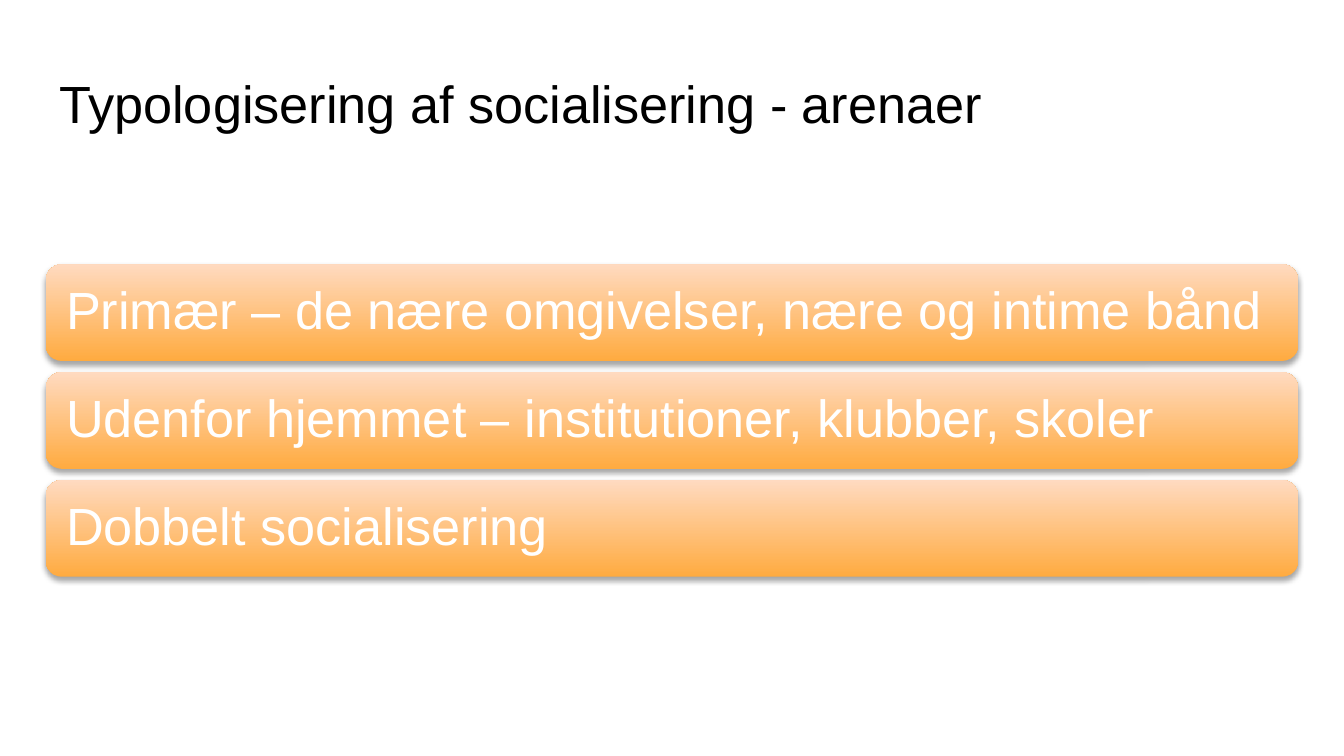
from dataclasses import dataclass

from lxml import etree
from pptx import Presentation
from pptx.dml.color import RGBColor
from pptx.enum import shapes, text
from pptx.oxml import ns
from pptx.util import Pt

BLACK = RGBColor(0x00, 0x00, 0x00)
WHITE = RGBColor(0xFF, 0xFF, 0xFF)
ORANGE = RGBColor(0xFF, 0xAB, 0x40)
PEACH = RGBColor(0xFF, 0xDA, 0xC0)

LEFT, WIDTH = 24.5, 671
TOP, HEIGHT, PITCH = 141.6, 51.8, 57.8


@dataclass
class Bar:
    label: str
    row: int


BARS = [
    Bar(label, row)
    for row, label in enumerate([
        "Primær – de nære omgivelser, nære og intime bånd",
        "Udenfor hjemmet – institutioner, klubber, skoler",
        "Dobbelt socialisering",
    ])
]


def apply(target, values: dict) -> None:
    for name, value in values.items():
        setattr(target, name, value)


def write(shape, words: str, color: RGBColor, inset: float, anchor) -> None:
    frame = shape.text_frame
    frame.text = words
    sides = ("left", "top", "right", "bottom")
    apply(frame, {f"margin_{side}": Pt(inset) for side in sides})
    apply(frame, {
        "word_wrap": True,
        "auto_size": text.MSO_AUTO_SIZE.NONE,
        "vertical_anchor": anchor,
    })
    line = frame.paragraphs[0]
    apply(line, {
        "alignment": text.PP_ALIGN.LEFT,
        "line_spacing": 0.9,
        "space_before": Pt(0),
    })
    font = line.runs[0].font
    apply(font, {"name": "Arial", "size": Pt(28)})
    font.color.rgb = color


def add_shade(shape) -> None:
    """Give the shape a soft shadow that falls straight down."""
    shape.shadow.inherit = False
    effects = shape.element.spPr.find(ns.qn("a:effectLst"))
    shade = etree.SubElement(
        effects, ns.qn("a:outerShdw"),
        blurRad=str(Pt(3.1)), dist=str(Pt(1.8)), dir="5400000",
        rotWithShape="0")
    color = etree.SubElement(shade, ns.qn("a:srgbClr"), val=str(BLACK))
    etree.SubElement(color, ns.qn("a:alpha"), val="35000")


def add_bar(slide, bar: Bar) -> None:
    shape = slide.shapes.add_shape(
        shapes.MSO_SHAPE.ROUNDED_RECTANGLE,
        Pt(LEFT), Pt(TOP + bar.row * PITCH), Pt(WIDTH), Pt(HEIGHT))
    shape.name = f"Arena {bar.row + 1}"
    shape.line.fill.background()
    fill = shape.fill
    fill.gradient()
    fill.gradient_angle = 90
    for stop, color in zip(fill.gradient_stops, (ORANGE, PEACH)):
        stop.color.rgb = color
    add_shade(shape)
    write(shape, bar.label, WHITE, 8.4, text.MSO_ANCHOR.MIDDLE)


def main() -> None:
    deck = Presentation()
    apply(deck, {"slide_width": Pt(720), "slide_height": Pt(405)})
    slide = deck.slides.add_slide(deck.slide_layouts.get_by_name("Title Only"))

    title = slide.shapes.title
    apply(title, {
        "left": Pt(LEFT),
        "top": Pt(35),
        "width": Pt(WIDTH),
        "height": Pt(45),
    })
    write(title, "Typologisering af socialisering - arenaer",
          BLACK, 7.2, text.MSO_ANCHOR.TOP)

    for bar in BARS:
        add_bar(slide, bar)
    deck.save("out.pptx")


if __name__ == "__main__":
    main()
